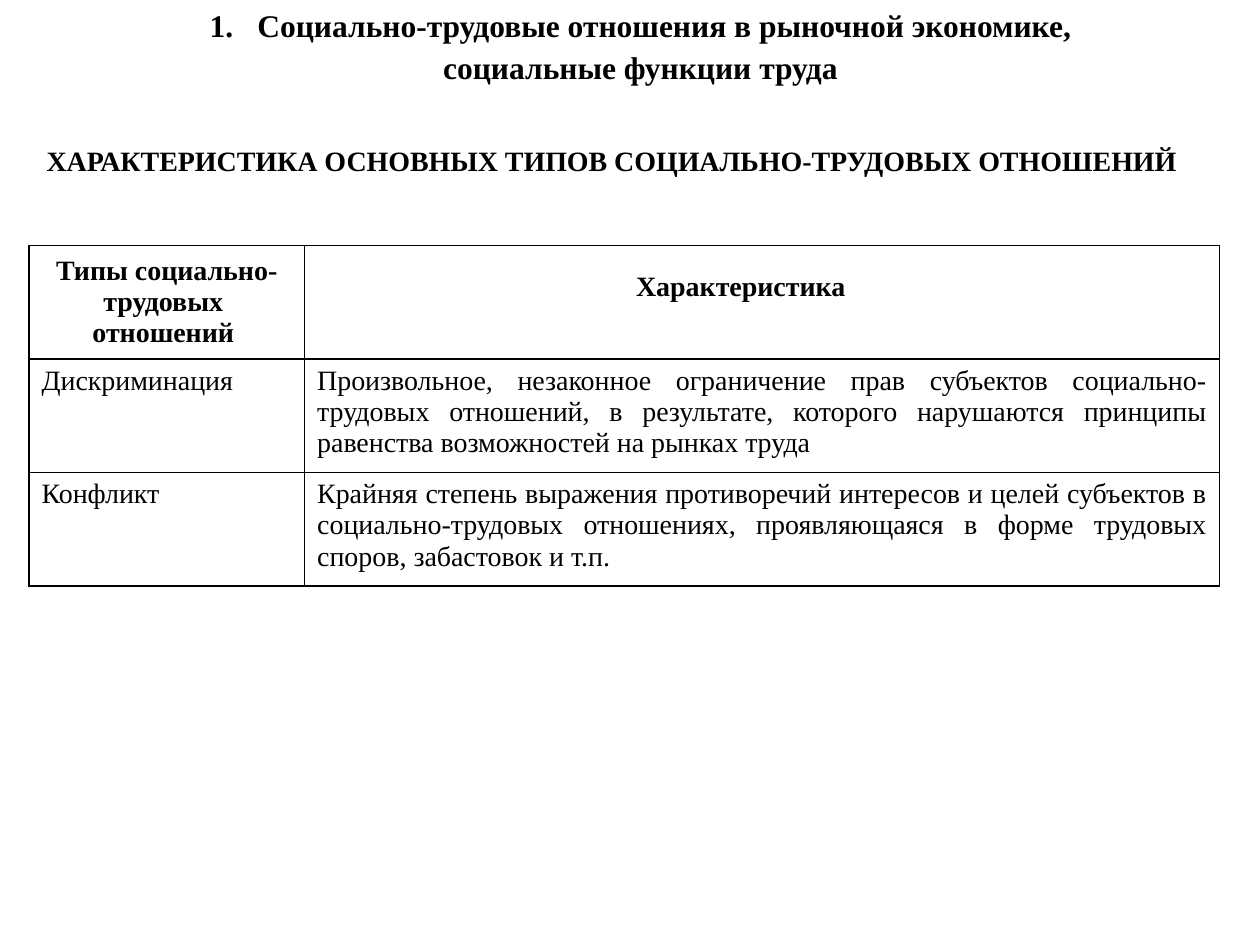
from lxml import etree
from pptx import Presentation
from pptx.dml.color import RGBColor
from pptx.enum.text import MSO_ANCHOR, PP_ALIGN
from pptx.oxml.ns import qn
from pptx.util import Inches, Pt

CENTER, JUSTIFY, LEFT = PP_ALIGN.CENTER, PP_ALIGN.JUSTIFY, PP_ALIGN.LEFT
MIDDLE, TOP = MSO_ANCHOR.MIDDLE, MSO_ANCHOR.TOP
FONT = "Times New Roman"
BLACK, WHITE = "000000", "FFFFFF"

TITLE = [
    "Социально-трудовые отношения в рыночной экономике, ",
    "социальные функции труда ",
]
HEADING = ["ХАРАКТЕРИСТИКА ОСНОВНЫХ ТИПОВ СОЦИАЛЬНО-ТРУДОВЫХ ОТНОШЕНИЙ "]
ROWS = [
    (["Типы социально-трудовых ", "отношений "], ["Характеристика \t"]),
    (["Дискриминация"],
     ["Произвольное, незаконное ограничение прав субъектов социально-трудовых "
      "отношений, в результате, которого нарушаются принципы равенства "
      "возможностей на рынках труда"]),
    (["Конфликт"],
     ["Крайняя степень выражения противоречий интересов и целей субъектов в "
      "социально-трудовых отношениях, проявляющаяся в форме трудовых споров, "
      "забастовок и т.п."]),
]
COLUMN_SHARES = (2.19, 7.27)


def color(value):
    return RGBColor.from_string(value)


def write(tf, lines, size, align, bold):
    for i, line in enumerate(lines):
        p = tf.paragraphs[0] if i == 0 else tf.add_paragraph()
        p.add_run().text = line
        p.alignment = align
        p.font.name = FONT
        p.font.size = Pt(size)
        p.font.bold = bold
        p.font.color.rgb = color(BLACK)


def add_text(s, box, lines, size):
    tf = s.shapes.add_textbox(*map(Inches, box)).text_frame
    tf.word_wrap = True
    write(tf, lines, size, CENTER, True)
    for p in tf.paragraphs:
        p.space_before = Pt(2)
    return tf


def add_title(s, box):
    tf = add_text(s, box, TITLE, 18)
    for i, p in enumerate(tf.paragraphs):
        pPr = p._p.get_or_add_pPr()
        pPr.set("marL", str(Inches(0.38)))
        pPr.set("indent", str(Inches(-0.38)))
        if i == 0:
            bullet = etree.Element(qn("a:buAutoNum"), type="arabicPeriod")
            pPr.find(qn("a:spcBef")).addnext(bullet)


def add_borders(cell):
    tcPr = cell._tc.get_or_add_tcPr()
    for i, side in enumerate(("lnL", "lnR", "lnT", "lnB")):
        ln = etree.Element(qn(f"a:{side}"), w=str(Pt(1)))
        fill = etree.SubElement(ln, qn("a:solidFill"))
        etree.SubElement(fill, qn("a:srgbClr"), val=BLACK)
        tcPr.insert(i, ln)


def add_types_table(s, box):
    table = s.shapes.add_table(len(ROWS), 2, *map(Inches, box)).table
    for column, share in zip(table.columns, COLUMN_SHARES):
        column.width = Inches(box[2] * share / sum(COLUMN_SHARES))
    for r, row in enumerate(ROWS):
        header = r == 0
        for c, lines in enumerate(row):
            cell = table.cell(r, c)
            cell.fill.solid()
            cell.fill.fore_color.rgb = color(WHITE)
            cell.vertical_anchor = MIDDLE if header else TOP
            align = CENTER if header else (LEFT, JUSTIFY)[c]
            write(cell.text_frame, lines, 16, align, header)
            add_borders(cell)
    table.cell(0, 1).margin_bottom = Inches(0.3)


def main():
    prs = Presentation()
    prs.slide_width, prs.slide_height = Inches(10), Inches(7.5)
    s = prs.slides.add_slide(prs.slide_layouts[6])
    add_title(s, (0.23, 0, 9.77, 0.71))
    add_text(s, (0, 1.09, 9.77, 0.37), HEADING, 16)
    add_types_table(s, (0.23, 1.95, 9.45, 2.7))
    prs.save("out.pptx")


if __name__ == "__main__":
    main()
